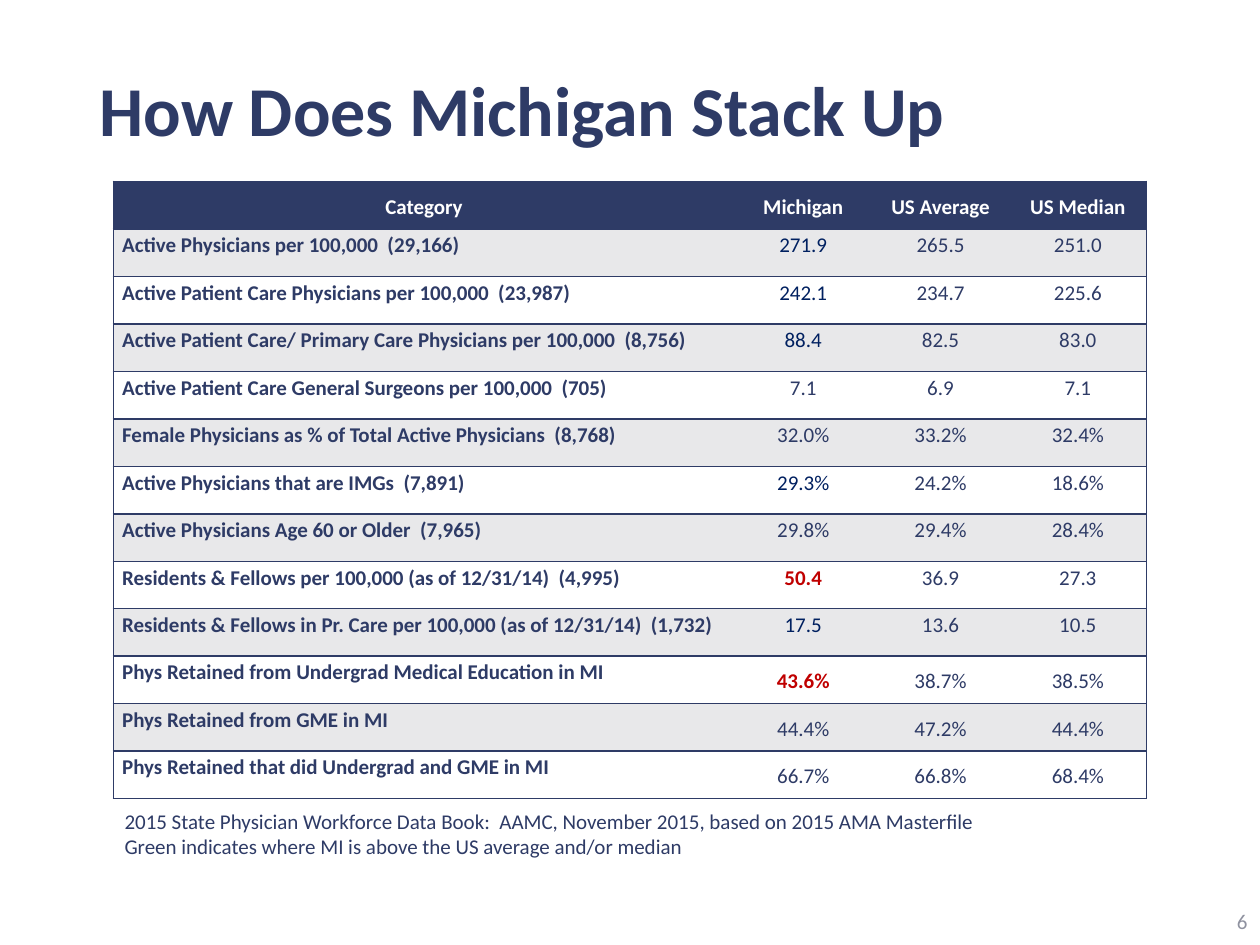
"""Build a slide with a table comparing Michigan physician figures with the US."""
from lxml.etree import SubElement
from pptx import Presentation
from pptx.dml.color import RGBColor
from pptx.enum.text import MSO_ANCHOR as Anchor, PP_ALIGN as Align
from pptx.oxml.ns import qn
from pptx.util import Inches, Pt

COLORS = {
    "ink": "2E3B66",
    "navy": "002060",
    "red": "C00000",
    "white": "FFFFFF",
    "band": "E8E8EA",
    "gray": "8F92A0",
}
NO_STYLE = "{2D5ABB26-0587-4C30-8999-92F81FD0307C}"
HEADERS = ["Category", "Michigan", "US Average", "US Median"]
ROWS = [
    ("Active Physicians per 100,000  (29,166)", "271.9", "265.5", "251.0", "navy"),
    ("Active Patient Care Physicians per 100,000  (23,987)", "242.1", "234.7", "225.6", "navy"),
    ("Active Patient Care/ Primary Care Physicians per 100,000  (8,756)", "88.4", "82.5", "83.0", "navy"),
    ("Active Patient Care General Surgeons per 100,000  (705)", "7.1", "6.9", "7.1", "ink"),
    ("Female Physicians as % of Total Active Physicians  (8,768)", "32.0%", "33.2%", "32.4%", "ink"),
    ("Active Physicians that are IMGs  (7,891)", "29.3%", "24.2%", "18.6%", "navy"),
    ("Active Physicians Age 60 or Older  (7,965)", "29.8%", "29.4%", "28.4%", "ink"),
    ("Residents & Fellows per 100,000 (as of 12/31/14)  (4,995)", "50.4", "36.9", "27.3", "red"),
    ("Residents & Fellows in Pr. Care per 100,000 (as of 12/31/14)  (1,732)", "17.5", "13.6", "10.5", "navy"),
    ("Phys Retained from Undergrad Medical Education in MI", "43.6%", "38.7%", "38.5%", "red"),
    ("Phys Retained from GME in MI", "44.4%", "47.2%", "44.4%", "ink"),
    ("Phys Retained that did Undergrad and GME in MI", "66.7%", "66.8%", "68.4%", "ink"),
]
FIRST_RETAINED_ROW = 10


def write_text(frame, text, size=12, color="ink", bold=False, align=Align.LEFT,
               anchor=Anchor.TOP, line_spacing=1.0):
    frame.text = text
    frame.word_wrap = True
    frame.vertical_anchor = anchor
    for paragraph in frame.paragraphs:
        paragraph.alignment = align
        paragraph.line_spacing = line_spacing
        for run in paragraph.runs:
            run.font.name = "Calibri"
            run.font.size = Pt(size)
            run.font.bold = bold
            run.font.color.rgb = RGBColor.from_string(COLORS[color])


def add_borders(cell, sides):
    properties = cell._tc.get_or_add_tcPr()
    for side in sides:
        line = SubElement(properties, qn(f"a:ln{side}"), w=str(Pt(1)))
        fill = SubElement(line, qn("a:solidFill"))
        SubElement(fill, qn("a:srgbClr"), val=COLORS["ink"])


presentation = Presentation()
presentation.slide_width = Inches(10)
presentation.slide_height = Inches(7.5)
slide = presentation.slides.add_slide(presentation.slide_layouts[5])

title = slide.shapes.title
title.left, title.top = Inches(0.69), Inches(0.18)
title.width, title.height = Inches(8.62), Inches(1.45)
write_text(title.text_frame, "How Does Michigan Stack Up", size=40, bold=True,
           anchor=Anchor.MIDDLE, line_spacing=0.9)

row_count = len(ROWS) + 1
table_shape = slide.shapes.add_table(row_count, len(HEADERS), Inches(0.9), Inches(1.44),
                                     Inches(8.2), Inches(4.9))
table = table_shape.table
table.first_row = True
table.horz_banding = False
table._tbl.tblPr.find(qn("a:tableStyleId")).text = NO_STYLE
for column, width in zip(table.columns, [4.93, 1.09, 1.09, 1.09]):
    column.width = Inches(width)

last_column = len(HEADERS) - 1
for row_index, (*texts, highlight) in enumerate([(*HEADERS, "white"), *ROWS]):
    is_header = row_index == 0
    for column_index, text in enumerate(texts):
        is_label = column_index == 0
        is_michigan = column_index == 1
        is_middle = is_header or (row_index >= FIRST_RETAINED_ROW and not is_label)
        color = "white" if is_header else highlight if is_michigan else "ink"
        cell = table.cell(row_index, column_index)
        cell.margin_left = cell.margin_right = Inches(0.07)
        cell.margin_top = cell.margin_bottom = 0
        write_text(cell.text_frame, text, color=color,
                   bold=is_header or is_label or color == "red",
                   align=Align.LEFT if is_label and not is_header else Align.CENTER,
                   line_spacing=1.15)
        cell.vertical_anchor = Anchor.MIDDLE if is_middle else Anchor.TOP
        add_borders(cell, ("L" if is_label else "") + ("R" if column_index == last_column else "") + "TB")
        cell.fill.solid()
        fill_name = "ink" if is_header else "band" if row_index % 2 else "white"
        cell.fill.fore_color.rgb = RGBColor.from_string(COLORS[fill_name])

source_note = slide.shapes.add_textbox(Inches(0.89), Inches(6.37), Inches(8.2), Inches(0.5))
write_text(source_note.text_frame,
           "2015 State Physician Workforce Data Book:  AAMC, November 2015, based on 2015 AMA Masterfile\n"
           "Green indicates where MI is above the US average and/or median")

slide_number = slide.shapes.add_textbox(Inches(7.75), Inches(7.11), Inches(2.25), Inches(0.4))
write_text(slide_number.text_frame, "6", color="gray", align=Align.RIGHT, anchor=Anchor.MIDDLE)

presentation.save("out.pptx")
